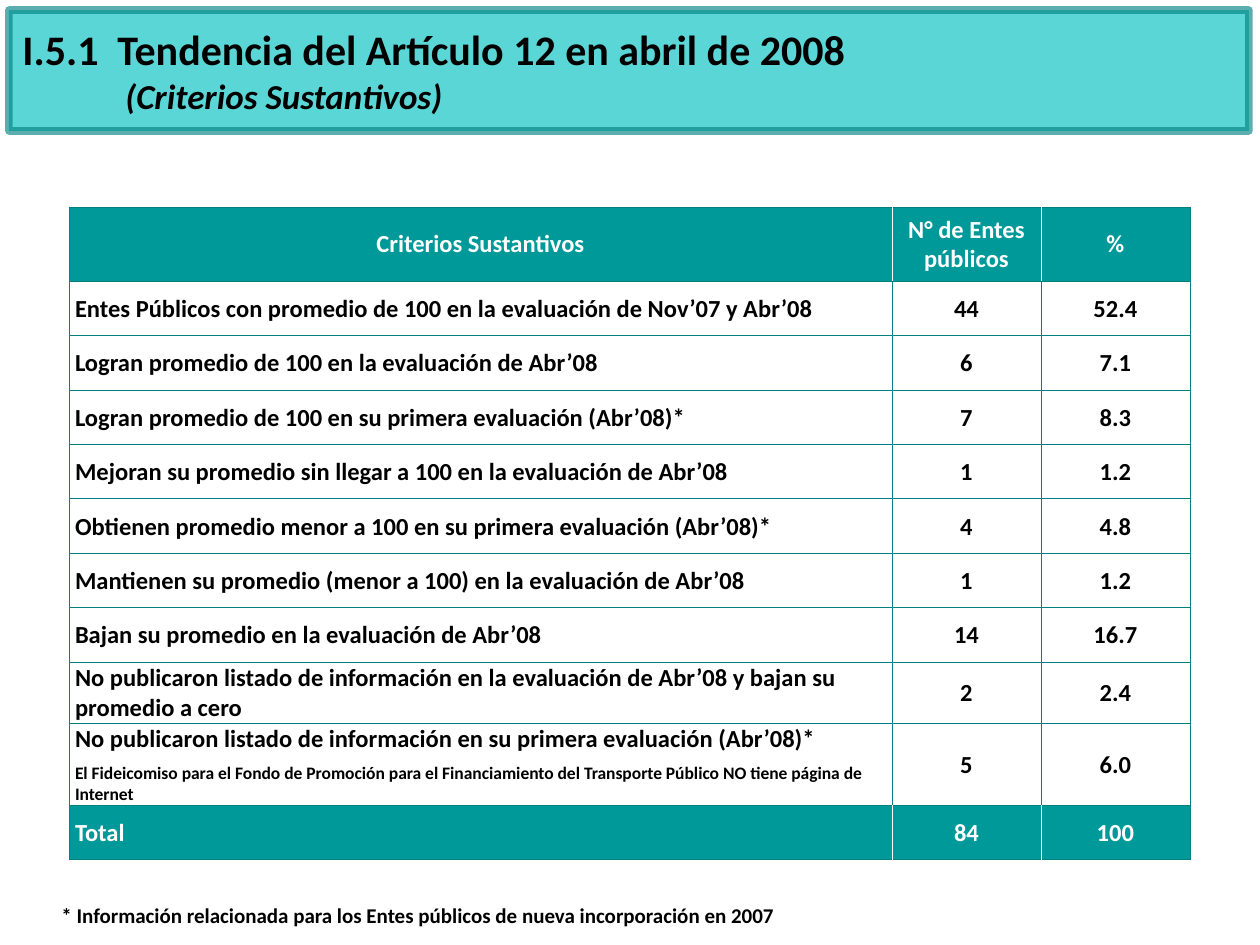
"""Build the slide on the Article 12 trend for April 2008."""
from lxml.etree import SubElement
from pptx import Presentation
from pptx.dml.color import RGBColor
from pptx.enum.shapes import MSO_SHAPE
from pptx.enum.text import MSO_ANCHOR, PP_ALIGN
from pptx.oxml.ns import qn
from pptx.util import Pt

PX = 914400 // 126
FONT = "Calibri"
BLACK = RGBColor(0x00, 0x00, 0x00)
WHITE = RGBColor(0xFF, 0xFF, 0xFF)
AQUA = RGBColor(0x33, 0xCC, 0xCC)
TEAL = RGBColor(0x00, 0x99, 0x99)
DARK_TEAL = RGBColor(0x00, 0x80, 0x80)

COLUMNS = [823, 149, 149]
TABLE_HEIGHT = 653
FIXED_ROWS = {0: 74, 8: 61, 9: 82}
ROWS = [
    (["Criterios Sustantivos"], "N° de Entes públicos", "%"),
    (["Entes Públicos con promedio de 100 en la evaluación de Nov’07 y Abr’08"], "44", "52.4"),
    (["Logran promedio de 100 en la evaluación de Abr’08"], "6", "7.1"),
    (["Logran promedio de 100 en su primera evaluación (Abr’08)*"], "7", "8.3"),
    (["Mejoran su promedio sin llegar a 100 en la evaluación de Abr’08"], "1", "1.2"),
    (["Obtienen promedio menor a 100 en su primera evaluación (Abr’08)*"], "4", "4.8"),
    (["Mantienen su promedio (menor a 100) en la evaluación de Abr’08"], "1", "1.2"),
    (["Bajan su promedio en la evaluación de Abr’08"], "14", "16.7"),
    (["No publicaron listado de información en la evaluación de Abr’08 y bajan su",
      "promedio a cero"], "2", "2.4"),
    (["No publicaron listado de información en su primera evaluación (Abr’08)*"], "5", "6.0"),
    (["Total"], "84", "100"),
]
NOTE_ROW = 9
NOTE = ["El Fideicomiso para el Fondo de Promoción para el Financiamiento del "
        "Transporte Público NO tiene página de", "Internet"]


def px(*lengths):
    return [round(n * PX) for n in lengths]


def add_run(p, text, size, color=BLACK, italic=False):
    r = p.add_run()
    r.text = text
    r.font.name = FONT
    r.font.size = Pt(size)
    r.font.bold = True
    r.font.italic = italic
    r.font.color.rgb = color


def next_paragraph(tf):
    return tf.paragraphs[0] if not tf.paragraphs[0].runs else tf.add_paragraph()


def set_indent(p, left, first=0):
    pPr = p._p.get_or_add_pPr()
    for name, value in zip(("marL", "indent"), px(left, first)):
        pPr.set(name, str(value))


def set_alpha(fill_parent, percent):
    color = fill_parent.find(qn("a:solidFill"))[0]
    SubElement(color, qn("a:alpha")).set("val", str(percent * 1000))


def add_banner(slide):
    sp = slide.shapes.add_shape(MSO_SHAPE.RECTANGLE, *px(9, 10, 1240, 121))
    sp.shadow.inherit = False
    sp.fill.solid()
    sp.fill.fore_color.rgb = AQUA
    sp.line.color.rgb = DARK_TEAL
    sp.line.width = Pt(4.33)
    spPr = sp._element.spPr
    set_alpha(spPr, 80)
    set_alpha(spPr.find(qn("a:ln")), 64)


def add_textbox(slide, left, top, width, height):
    tf = slide.shapes.add_textbox(*px(left, top, width, height)).text_frame
    tf.word_wrap = True
    return tf


def add_title(slide):
    tf = add_textbox(slide, 10, 11, 1155, 118)
    tf.vertical_anchor = MSO_ANCHOR.MIDDLE
    p = next_paragraph(tf)
    set_indent(p, 95, -95)
    add_run(p, "I.5.1\tTendencia del Artículo 12 en abril de 2008", 24)
    p = next_paragraph(tf)
    set_indent(p, 103)
    add_run(p, "(Criterios Sustantivos)", 20, italic=True)


def set_borders(cell, left, right):
    tcPr = cell._tc.get_or_add_tcPr()
    sides = {"lnL": left, "lnR": right, "lnT": DARK_TEAL, "lnB": DARK_TEAL}
    for side, color in sides.items():
        ln = SubElement(tcPr, qn(f"a:{side}"), w=str(Pt(0.5)))
        fill = SubElement(ln, qn("a:solidFill"))
        SubElement(fill, qn("a:srgbClr"), val=str(color))


def format_cell(cell, col, filled):
    inner = WHITE if filled else DARK_TEAL
    last = len(COLUMNS) - 1
    set_borders(cell, inner if col else DARK_TEAL, inner if col < last else DARK_TEAL)
    if filled:
        cell.fill.solid()
        cell.fill.fore_color.rgb = TEAL
    else:
        cell.fill.background()
    cell.vertical_anchor = MSO_ANCHOR.MIDDLE
    cell.margin_left, cell.margin_right, cell.margin_top, cell.margin_bottom = px(1, 1, 1, 0)


def fill_cell(cell, lines, centered, color):
    for line in lines:
        p = next_paragraph(cell.text_frame)
        if centered:
            p.alignment = PP_ALIGN.CENTER
        else:
            set_indent(p, 5)
        add_run(p, line, 14, color)


def add_note(cell):
    for line, gap in zip(NOTE, (5, 0)):
        p = next_paragraph(cell.text_frame)
        set_indent(p, 5)
        p.space_before = Pt(gap)
        add_run(p, line, 10)


def add_criteria_table(slide):
    frame = slide.shapes.add_table(len(ROWS), len(COLUMNS),
                                   *px(69, 207, sum(COLUMNS), TABLE_HEIGHT))
    table = frame.table
    table.first_row = table.horz_banding = False
    for column, width in zip(table.columns, px(*COLUMNS)):
        column.width = width
    shared = (TABLE_HEIGHT - sum(FIXED_ROWS.values())) / (len(ROWS) - len(FIXED_ROWS))
    for i, (criterion, count, percent) in enumerate(ROWS):
        table.rows[i].height = px(FIXED_ROWS.get(i, shared))[0]
        filled = i in (0, len(ROWS) - 1)
        for j, lines in enumerate((criterion, [count], [percent])):
            cell = table.cell(i, j)
            format_cell(cell, j, filled)
            fill_cell(cell, lines, i == 0 or j > 0, WHITE if filled else BLACK)
    add_note(table.cell(NOTE_ROW, 0))


def add_footnote(slide):
    tf = add_textbox(slide, 49, 896, 1182, 38)
    add_run(next_paragraph(tf), "* Información relacionada para los Entes públicos "
            "de nueva incorporación en 2007", 12)


def main():
    prs = Presentation()
    prs.slide_width, prs.slide_height = px(1260, 945)
    slide = prs.slides.add_slide(prs.slide_layouts[6])
    add_banner(slide)
    add_title(slide)
    add_criteria_table(slide)
    add_footnote(slide)
    prs.save("out.pptx")


if __name__ == "__main__":
    main()
